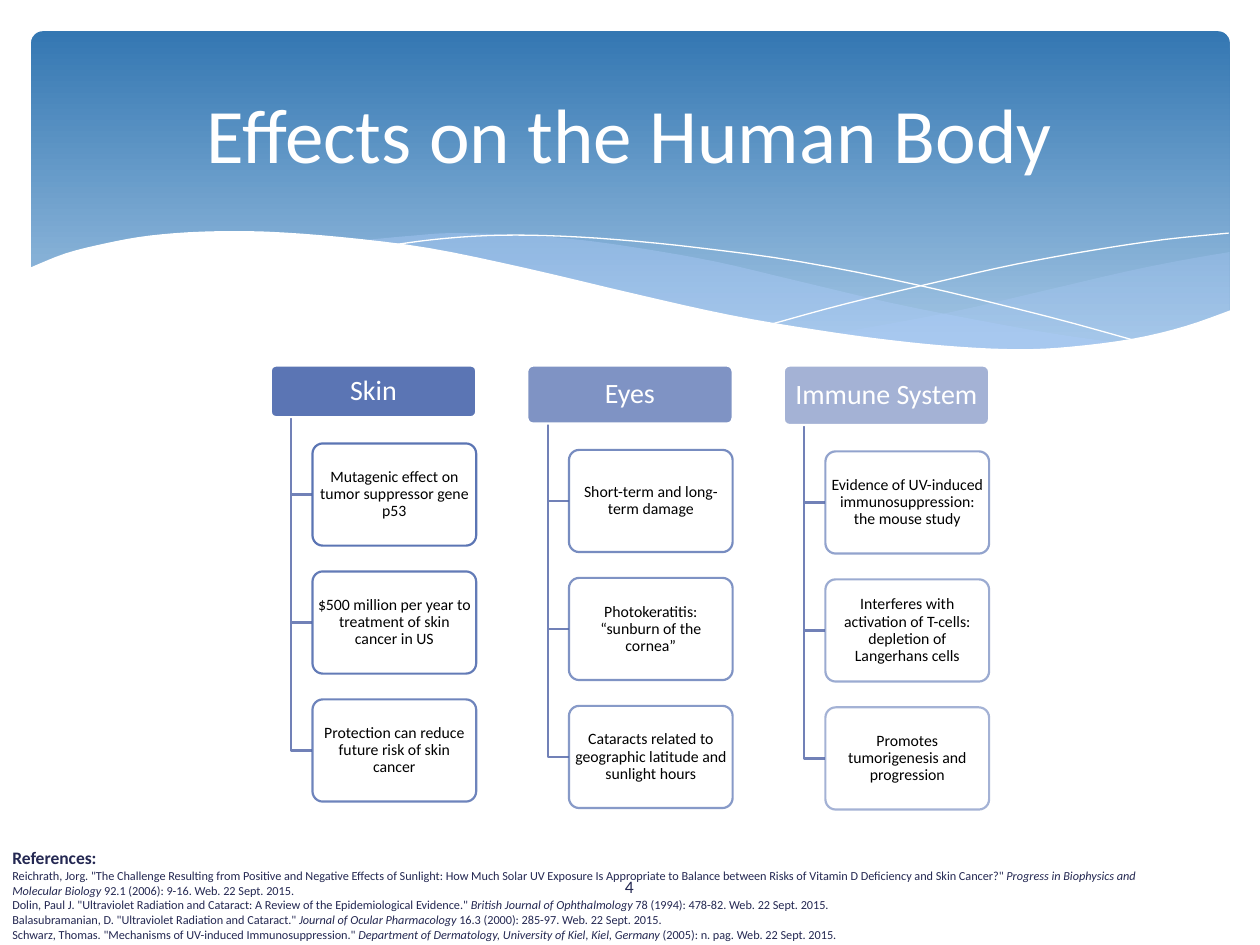
from lxml.etree import SubElement
from pptx import Presentation
from pptx.dml.color import RGBColor
from pptx.enum.shapes import MSO_SHAPE
from pptx.enum.text import MSO_ANCHOR, PP_ALIGN
from pptx.oxml.ns import qn
from pptx.util import Cm, Pt

WHITE, NAVY, BLUE = "FFFFFF", "242852", "4A66AC"


def dye(color, tone, alpha=100):
    """Set a colour from a hex string, with its opacity in percent."""
    color.rgb = RGBColor.from_string(tone)
    if alpha < 100:
        node = color._xFill.find(qn("a:srgbClr"))
        SubElement(node, qn("a:alpha")).set("val", str(alpha * 1000))


def write(frame, runs, size, tone, inset=(0.25, 0.13), align=PP_ALIGN.CENTER,
          first=True, bold=False, space=1.0):
    """Add one paragraph; every second run is italic."""
    frame.word_wrap = True
    frame.vertical_anchor = MSO_ANCHOR.MIDDLE
    frame.margin_left = frame.margin_right = Cm(inset[0])
    frame.margin_top = frame.margin_bottom = Cm(inset[1])
    para = frame.paragraphs[0] if first else frame.add_paragraph()
    para.alignment = align
    para.line_spacing = space
    for k, words in enumerate(runs):
        run = para.add_run()
        run.text = words
        run.font.name = "Calibri"
        run.font.size = Pt(size)
        run.font.bold = bold
        run.font.italic = k % 2 == 1
        dye(run.font.color, tone)


deck = Presentation()
deck.slide_width, deck.slide_height = Cm(25.4), Cm(19.05)
slide = deck.slides.add_slide(deck.slide_layouts[6])
shapes = slide.shapes

# Banner with gradient
panel = shapes.add_shape(MSO_SHAPE.ROUNDED_RECTANGLE,
                         Cm(0.63), Cm(0.63), Cm(24.16), Cm(6.86))
panel.adjustments[0] = 0.034
panel.shadow.inherit = False
panel.line.fill.background()
panel.fill.gradient()
panel.fill.gradient_angle = 270
for stop, (spot, tone) in zip(panel.fill.gradient_stops,
                              [(0, "3477B2"), (0.9, "A1C4E3")]):
    stop.position = spot
    dye(stop.color, tone)

# Waves: (fill, opacity, curves in cm); no fill means a thin white line
waves = [
    ("ACCBF9", 29, [
        [(24.79, 5.08), (23.75, 5.26), (22.63, 5.49), (21.13, 5.84),
         (19.13, 6.3), (16.79, 6.73)],
        [(16.79, 6.73), (17.91, 6.88), (18.92, 6.98), (20.12, 7.04),
         (21.21, 7.04), (22.38, 6.93), (23.39, 6.73), (24.1, 6.53),
         (24.79, 6.27)]]),
    ("ACCBF9", 40, [
        [(22.68, 6.93), (21.26, 6.73), (19.69, 6.45), (17.93, 6.1),
         (15.98, 5.64), (14.45, 5.28), (13.06, 5.03), (11.81, 4.85),
         (10.67, 4.75), (9.17, 4.7), (8.33, 4.75), (7.26, 4.85)],
        [(7.26, 4.85), (8.69, 5.05), (10.26, 5.36), (12.47, 5.89),
         (14.38, 6.3), (16.1, 6.63), (17.65, 6.86), (19, 7.01),
         (20.22, 7.06), (21.54, 7.04), (22.68, 6.93)]]),
    (None, 100, [
        [(7.85, 4.95), (8.74, 4.83), (9.83, 4.75), (11, 4.75),
         (12.42, 4.83), (14.12, 5), (16.15, 5.28), (18.47, 5.74),
         (21.11, 6.38), (23.04, 6.91)]]),
    (None, 100, [
        [(15.57, 6.53), (17.07, 6.12), (19, 5.66), (20.47, 5.33),
         (22, 5.05), (23.47, 4.83), (24.77, 4.7)]]),
    (WHITE, 100, [
        [(24.82, 6.25), (23.88, 6.58), (22.83, 6.83), (21.59, 6.99),
         (20.55, 7.04), (19.33, 6.99), (17.98, 6.86), (16.46, 6.65),
         (14.71, 6.35), (12.78, 5.92), (10.62, 5.41), (8.64, 5),
         (6.88, 4.78), (5.36, 4.67), (4.09, 4.67), (3.02, 4.75),
         (2.16, 4.9), (1.32, 5.11), (0.58, 5.41)],
        [(0.58, 8.36), (24.82, 8.36)]]),
]
for tone, alpha, curves in waves:
    dots = []
    for curve in curves:
        # Catmull-Rom: four steps between neighbouring points
        ends = [curve[0]] + curve + [curve[-1]]
        dots.append(curve[0])
        for a, b, c, d in zip(ends, ends[1:], ends[2:], ends[3:]):
            for t in (0.25, 0.5, 0.75, 1):
                dots.append(tuple(
                    q + t / 2 * (r - p + t * (2 * p - 5 * q + 4 * r - s
                                 + t * (3 * q - p - 3 * r + s)))
                    for p, q, r, s in zip(a, b, c, d)))
    dots = [(Cm(x), Cm(y)) for x, y in dots]
    pen = shapes.build_freeform(*dots[0])
    pen.add_line_segments(dots[1:], close=tone is not None)
    wave = pen.convert_to_shape()
    wave.shadow.inherit = False
    if tone:
        wave.fill.solid()
        dye(wave.fill.fore_color, tone, alpha)
        wave.line.fill.background()
    else:
        wave.fill.background()
        dye(wave.line.color, WHITE)
        wave.line.width = Pt(0)

# Page number and title
page = shapes.add_textbox(Cm(11.07), Cm(17.37), Cm(3.23), Cm(1.02))
write(page.text_frame, ["4"], 10, NAVY)
title = shapes.add_textbox(Cm(1.27), Cm(0.94), Cm(22.86), Cm(3.48))
write(title.text_frame, ["Effects on the Human Body"], 44, WHITE)

# Three columns: (heading, height in cm, opacity, leaves)
columns = [
    ("Skin", 1.04, 90, [
        "Mutagenic effect on tumor suppressor gene p53",
        "$500 million per year to treatment of skin cancer in US",
        "Protection can reduce future risk of skin cancer"]),
    ("Eyes", 1.17, 70, [
        "Short-term and long-term damage",
        "Photokeratitis: “sunburn of the cornea”",
        "Cataracts related to geographic latitude and sunlight hours"]),
    ("Immune System", 1.2, 50, [
        "Evidence of UV-induced immunosuppression: the mouse study",
        "Interferes with activation of T-cells: depletion of "
        "Langerhans cells",
        "Promotes tumorigenesis and progression"]),
]
top, tall = 7.37, 2.06
for i, (head, high, alpha, leaves) in enumerate(columns):
    left, base = 5.46 + 5.17 * i, top + high
    # Each box: x, y, width, height, text, size, text colour, inset,
    # fill, fill opacity, line colour, line opacity
    boxes = [(left, top, 4.14, high, head, 16, WHITE, (0.08, 0.05),
              BLUE, alpha, WHITE, 100)]
    for j, leaf in enumerate(leaves):
        x, y = left + 0.84, base + 0.53 + 2.58 * j
        boxes.append((x, y, 3.3, tall, leaf, 9, "000000", (0.04, 0.03),
                      WHITE, 90, BLUE, 90 - 5 * (3 * i + j)))
        # Bracket from the heading to this leaf
        stem, mid = Cm(left + 0.41), Cm(y + tall / 2)
        pen = shapes.build_freeform(stem, Cm(base))
        pen.add_line_segments([(stem, mid), (Cm(x), mid)], close=False)
        link = pen.convert_to_shape()
        link.shadow.inherit = False
        link.fill.background()
        dye(link.line.color, "7181B7")
        link.line.width = Pt(1.25)
    for x, y, w, h, words, size, ink, inset, tone, fade, edge, veil in boxes:
        box = shapes.add_shape(MSO_SHAPE.ROUNDED_RECTANGLE,
                               Cm(x), Cm(y), Cm(w), Cm(h))
        box.adjustments[0] = 0.1
        box.shadow.inherit = False
        box.fill.solid()
        dye(box.fill.fore_color, tone, fade)
        dye(box.line.color, edge, veil)
        box.line.width = Pt(1.25)
        write(box.text_frame, [words], size, ink, inset, space=0.9)

# References
notes = [
    ['Reichrath, Jorg. "The Challenge Resulting from Positive and Negative '
     'Effects of Sunlight: How Much Solar UV Exposure Is Appropriate to '
     'Balance between Risks of Vitamin D Deficiency and Skin Cancer?" ',
     "Progress in Biophysics and Molecular Biology ",
     "92.1 (2006): 9-16. Web. 22 Sept. 2015."],
    ['Dolin, Paul J. "Ultraviolet Radiation and Cataract: A Review of the '
     'Epidemiological Evidence." ', "British Journal of Ophthalmology",
     " 78 (1994): 478-82. Web. 22 Sept. 2015."],
    ['Balasubramanian, D. "Ultraviolet Radiation and Cataract." ',
     "Journal of Ocular Pharmacology",
     " 16.3 (2000): 285-97. Web. 22 Sept. 2015."],
    ['Schwarz, Thomas. "Mechanisms of UV-induced Immunosuppression." ',
     "Department of Dermatology, University of Kiel, Kiel, Germany",
     " (2005): n. pag. Web. 22 Sept. 2015."],
]
refs = shapes.add_textbox(Cm(0), Cm(16.95), Cm(23.95), Cm(2.1)).text_frame
write(refs, ["References:"], 10, NAVY, align=PP_ALIGN.LEFT, bold=True)
for note in notes:
    write(refs, note, 7, NAVY, align=PP_ALIGN.LEFT, first=False)
refs.vertical_anchor = MSO_ANCHOR.TOP

deck.save("out.pptx")
